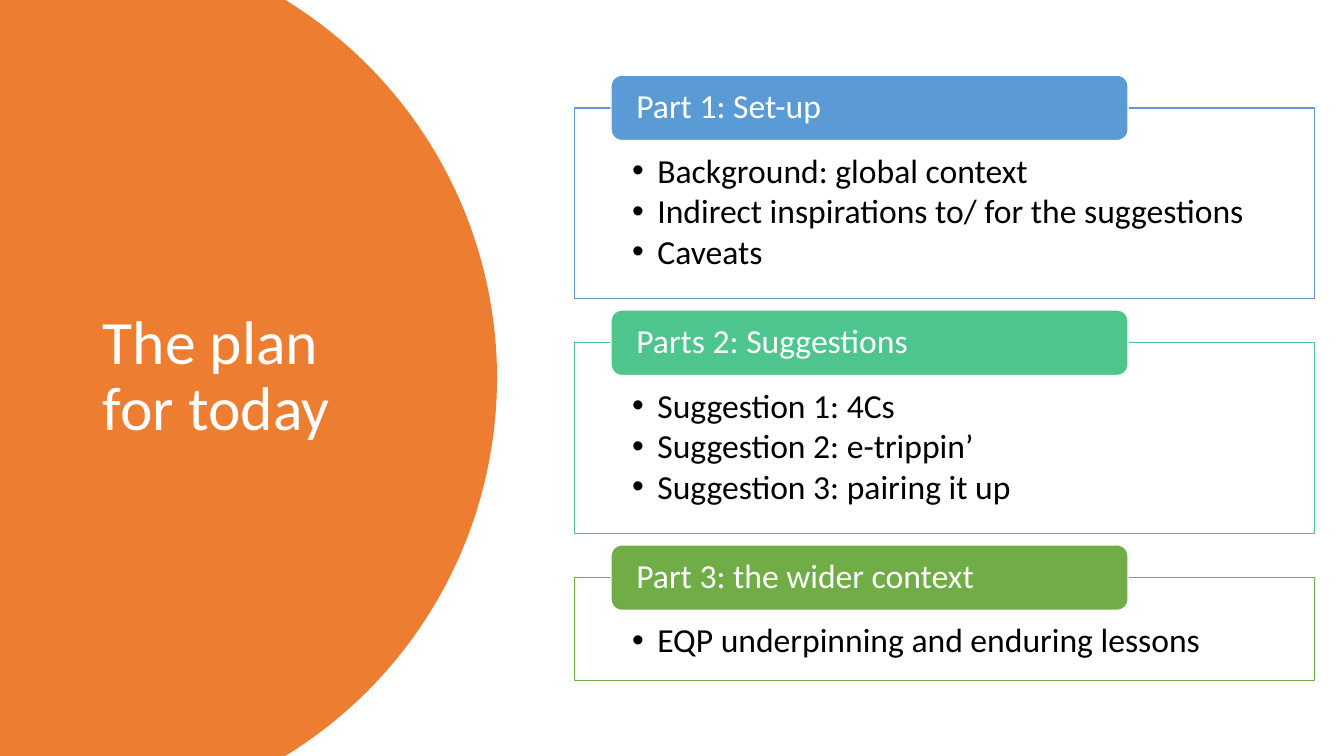
from math import asin, cos, hypot, sin

from lxml.etree import SubElement
from pptx import Presentation
from pptx.dml.color import RGBColor
from pptx.enum.shapes import MSO_SHAPE as Shape
from pptx.enum.text import MSO_ANCHOR as Anchor, MSO_AUTO_SIZE as AutoSize, PP_ALIGN as Align
from pptx.oxml.ns import qn
from pptx.util import Inches, Pt

TITLE = "The plan \vfor today"
PARTS = [
    ("Part 1: Set-up", "5B9BD5", 1.89,
     ["Background: global context", "Indirect inspirations to/ for the suggestions", "Caveats"]),
    ("Parts 2: Suggestions", "4DC58D", 1.89,
     ["Suggestion 1: 4Cs", "Suggestion 2: e-trippin’", "Suggestion 3: pairing it up"]),
    ("Part 3: the wider context", "70AD47", 1.02,
     ["EQP underpinning and enduring lessons"]),
]
THEME = {"font": "Calibri", "title": 44, "text": 24, "white": "FFFFFF",
         "black": "000000", "orange": "ED7D31"}

WIDTH, HEIGHT = 13.33, 7.5
ARC_EDGE, ARC_TIP, ARC_STEPS = 2.83, 4.93, 120
FRAME_LEFT, FRAME_TOP, FRAME_WIDTH, FRAME_GAP = 5.7, 1.07, 7.34, 0.44
LABEL_LEFT, LABEL_WIDTH, LABEL_HEIGHT = 6.06, 5.13, 0.65

FRAME_FORMAT = {"margin_left": Inches(0.57), "margin_top": Inches(0.46),
                "margin_right": Inches(0.57), "margin_bottom": Inches(0.19),
                "vertical_anchor": Anchor.TOP, "word_wrap": True}
LABEL_FORMAT = {"margin_left": Inches(0.22), "margin_top": 0, "margin_right": Inches(0.22),
                "margin_bottom": 0, "vertical_anchor": Anchor.MIDDLE, "word_wrap": True}
TITLE_FORMAT = {"vertical_anchor": Anchor.MIDDLE, "word_wrap": True, "auto_size": AutoSize.NONE}


def apply(target, values):
    for key, value in values.items():
        setattr(target, key, value)


def paint(shape, fill, line=None):
    shape.shadow.inherit = False
    shape.fill.solid()
    shape.fill.fore_color.rgb = RGBColor.from_string(fill)
    if line:
        shape.line.color.rgb = RGBColor.from_string(line)
        shape.line.width = Pt(1)
    else:
        shape.line.fill.background()


def write(shape, lines, frame_format, size, color, after=0):
    frame = shape.text_frame
    apply(frame, frame_format)
    frame.text = "\n".join(lines)
    for paragraph in frame.paragraphs:
        apply(paragraph, {"alignment": Align.LEFT, "line_spacing": 0.9, "space_after": Pt(after)})
        apply(paragraph.font, {"name": THEME["font"], "size": Pt(size)})
        paragraph.font.color.rgb = RGBColor.from_string(color)


def add_bullets(shape):
    for paragraph in shape.text_frame.paragraphs:
        properties = paragraph._p.get_or_add_pPr()
        properties.set("marL", str(Inches(0.25)))
        properties.set("indent", str(-Inches(0.25)))
        SubElement(properties, qn("a:buFont"), typeface="Arial")
        SubElement(properties, qn("a:buChar"), char="•")


def add_box(slide, kind, *place):
    return slide.shapes.add_shape(kind, *map(Inches, place))


def add_half_disc(slide):
    half, depth = HEIGHT / 2, ARC_TIP - ARC_EDGE
    radius = hypot(depth, half) ** 2 / (2 * depth)
    reach = asin(half / radius)
    angles = [reach * (2 * step / ARC_STEPS - 1) for step in range(ARC_STEPS + 1)]
    arc = [(Inches(ARC_TIP - radius + radius * cos(angle)), Inches(half + radius * sin(angle)))
           for angle in angles]
    builder = slide.shapes.build_freeform(0, 0)
    builder.add_line_segments(arc + [(0, Inches(HEIGHT))], close=True)
    paint(builder.convert_to_shape(), THEME["orange"])


def add_title(slide):
    title = slide.shapes.title
    slide.shapes._spTree.append(title._element)
    apply(title, {"left": Inches(0.92), "top": Inches(0.7),
                  "width": Inches(3.23), "height": Inches(6.09)})
    write(title, [TITLE], TITLE_FORMAT, THEME["title"], THEME["white"])


def add_part(slide, top, height, heading, color, points):
    frame = add_box(slide, Shape.RECTANGLE, FRAME_LEFT, top, FRAME_WIDTH, height)
    paint(frame, THEME["white"], color)
    fill_color = frame._element.spPr.find(qn("a:solidFill"))[0]
    SubElement(fill_color, qn("a:alpha"), val="90000")
    write(frame, points, FRAME_FORMAT, THEME["text"], THEME["black"], after=3)
    add_bullets(frame)
    label = add_box(slide, Shape.ROUNDED_RECTANGLE, LABEL_LEFT, top - LABEL_HEIGHT / 2,
                    LABEL_WIDTH, LABEL_HEIGHT)
    paint(label, color, THEME["white"])
    write(label, [heading], LABEL_FORMAT, THEME["text"], THEME["white"])


def main():
    deck = Presentation()
    apply(deck, {"slide_width": Inches(WIDTH), "slide_height": Inches(HEIGHT)})
    slide = deck.slides.add_slide(deck.slide_layouts[5])
    add_half_disc(slide)
    add_title(slide)
    top = FRAME_TOP
    for heading, color, height, points in PARTS:
        add_part(slide, top, height, heading, color, points)
        top += height + FRAME_GAP
    deck.save("out.pptx")


if __name__ == "__main__":
    main()
